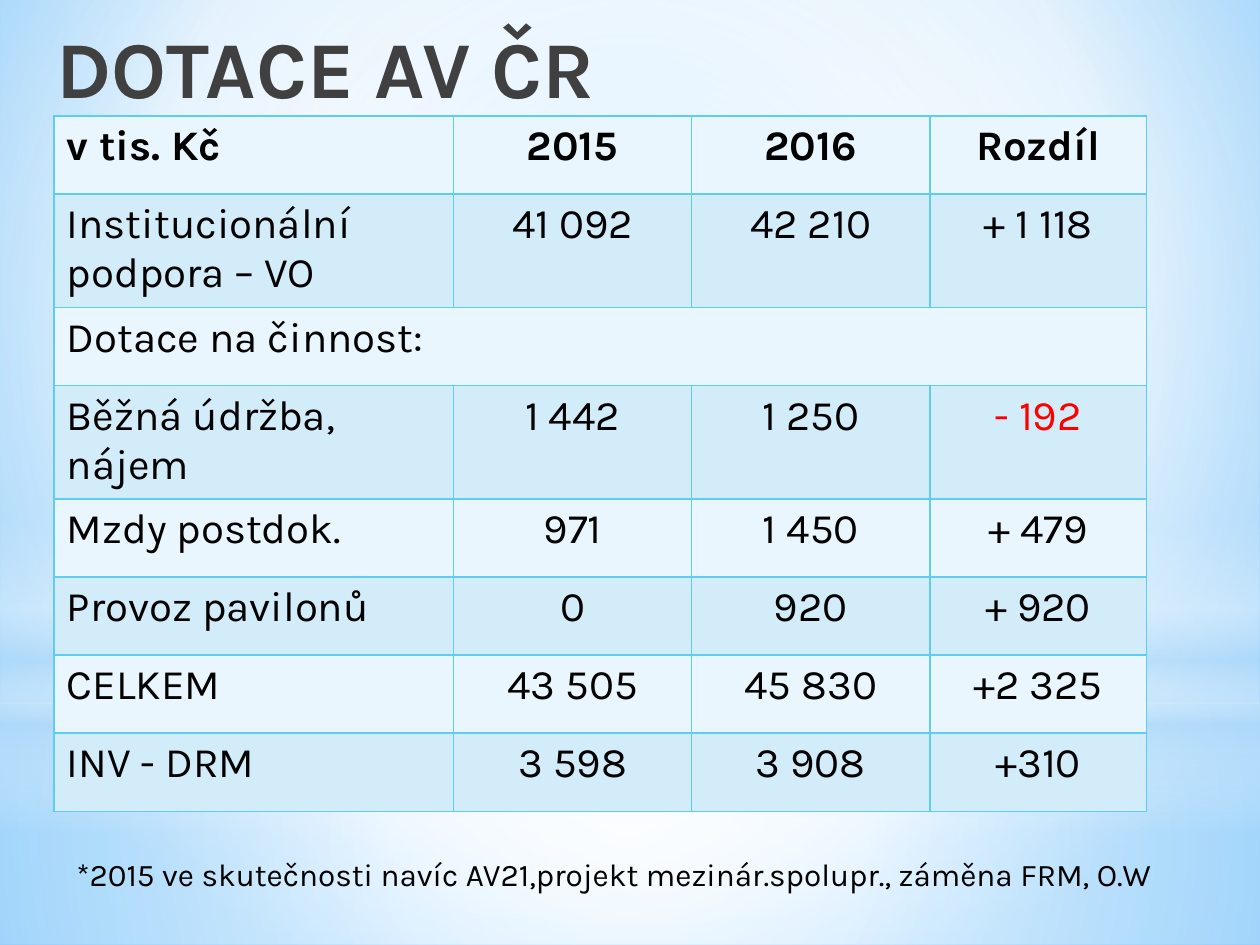
from pptx import Presentation
from pptx.dml.color import RGBColor
from pptx.enum.shapes import MSO_SHAPE as Shape
from pptx.enum.text import MSO_ANCHOR as Anchor, PP_ALIGN as Align
from pptx.oxml import parse_xml
from pptx.oxml.ns import nsdecls, qn
from pptx.util import Inches, Pt

CENTER = (50, 50, 50, 50)
COLUMN_WIDTHS = (3.17, 1.89, 1.89, 1.72)
ROWS = (
    ("v tis. Kč", "2015", "2016", "Rozdíl"),
    ("Institucionální podpora – VO", "41 092", "42 210", "+ 1 118"),
    ("Dotace na činnost:",),
    ("Běžná údržba, nájem", "1 442", "1 250", "- 192"),
    ("Mzdy postdok.", "971", "1 450", "+ 479"),
    ("Provoz pavilonů", "0", "920", "+ 920"),
    ("CELKEM", "43 505", "45 830", "+2 325"),
    ("INV - DRM", "3 598", "3 908", "+310"),
)
TALL_ROWS = (1, 3)


def color(value):
    return RGBColor.from_string(value)


class SlideBuilder:
    """Draws styled elements on the current slide."""

    font = "Karla"
    text_color = "000000"
    border_color = "5ECCF3"
    row_fills = ("EAF6FD", "D2ECFA")

    def __init__(self, slide):
        self.slide = slide

    def gradient(self, element, stops, focus=None, angle=90):
        stop_xml = "".join(
            f'<a:gs pos="{position * 1000}"><a:srgbClr val="{value}">'
            f'<a:alpha val="{opacity * 1000}"/></a:srgbClr></a:gs>'
            for position, value, opacity in stops
        )
        if focus:
            left, top, right, bottom = (side * 1000 for side in focus)
            direction = (
                f'<a:path path="circle"><a:fillToRect l="{left}" t="{top}" '
                f'r="{right}" b="{bottom}"/></a:path>'
            )
        else:
            direction = f'<a:lin ang="{angle * 60000}" scaled="0"/>'
        solid = element.find(".//" + qn("a:solidFill"))
        solid.getparent().replace(solid, parse_xml(
            f'<a:gradFill {nsdecls("a")} rotWithShape="1">'
            f"<a:gsLst>{stop_xml}</a:gsLst>{direction}</a:gradFill>"
        ))

    def background(self, stops, focus):
        self.slide.background.fill.solid()
        self.gradient(self.slide._element, stops, focus)

    def glow(self, kind, top, height, stops, focus=None):
        shape = self.slide.shapes.add_shape(
            kind, Inches(0), Inches(top), Inches(10), Inches(height))
        shape.shadow.inherit = False
        shape.line.fill.background()
        shape.fill.solid()
        self.gradient(shape._element, stops, focus)

    def add_text(self, frame, text, size, value=None, bold=False, align=Align.LEFT):
        paragraph = frame.paragraphs[0]
        paragraph.alignment = align
        run = paragraph.add_run()
        run.text = text
        run.font.name = self.font
        run.font.size = Pt(size)
        run.font.bold = bold
        run.font.color.rgb = color(value or self.text_color)

    def text_box(self, left, top, width, height, text, size, inset=0.05, **style):
        shape = self.slide.shapes.add_textbox(
            Inches(left), Inches(top), Inches(width), Inches(height))
        frame = shape.text_frame
        frame.word_wrap = True
        frame.vertical_anchor = Anchor.TOP
        frame.margin_top = Inches(inset)
        self.add_text(frame, text, size, **style)

    def borders(self, cell):
        properties = cell._tc.get_or_add_tcPr()
        for side in ("lnL", "lnR", "lnT", "lnB"):
            properties.append(parse_xml(
                f'<a:{side} {nsdecls("a")} w="{Pt(1)}"><a:solidFill>'
                f'<a:srgbClr val="{self.border_color}"/></a:solidFill></a:{side}>'
            ))

    def table(self, left, top, widths, heights, rows):
        table = self.slide.shapes.add_table(
            len(rows), len(widths), Inches(left), Inches(top),
            Inches(sum(widths)), Inches(sum(heights))).table
        for column, width in zip(table.columns, widths):
            column.width = Inches(width)
        for index, (texts, height) in enumerate(zip(rows, heights)):
            table.rows[index].height = Inches(height)
            for cell in table.rows[index].cells:
                self.borders(cell)
                cell.fill.solid()
                cell.fill.fore_color.rgb = color(self.row_fills[index % 2])
            if len(texts) == 1:
                table.cell(index, 0).merge(table.cell(index, len(widths) - 1))
            for position, text in enumerate(texts):
                self.add_text(
                    table.cell(index, position).text_frame, text, 24,
                    value="FF0000" if text.startswith("-") else None,
                    bold=index == 0,
                    align=Align.CENTER if position else Align.LEFT)


def main():
    presentation = Presentation()
    presentation.slide_width = Inches(10)
    presentation.slide_height = Inches(7.5)
    builder = SlideBuilder(presentation.slides.add_slide(presentation.slide_layouts[6]))

    builder.background(
        ((0, "9ED5FF", 100), (60, "FFFFFF", 100), (100, "5BB9FF", 100)), (20, 10, 20, 60))
    builder.glow(Shape.RECTANGLE, 5.58, 1.92,
                 ((0, "FFFFFF", 91), (37, "FFFFFF", 76), (100, "B4DCFA", 79)), CENTER)
    builder.glow(Shape.RECTANGLE, 0, 5.58,
                 ((0, "FFFFFF", 89), (48, "FFFFFF", 62), (100, "B4DCFA", 79)), CENTER)
    builder.glow(Shape.RECTANGLE, 4.12, 2.5,
                 ((0, "FFFFFF", 0), (29, "FFFFFF", 30), (45, "B4DCFA", 40),
                  (55, "FFFFFF", 26), (65, "B4DCFA", 60), (100, "FFFFFF", 0)))
    builder.glow(Shape.OVAL, 1.75, 5.58,
                 ((0, "FFFFFF", 100), (56, "FFFFFF", 0), (100, "FFFFFF", 0)), CENTER)

    builder.text_box(0.35, 0.04, 9.65, 1.25, "DOTACE AV ČR", 46, inset=0.1,
                     value="404040", bold=True)
    heights = [0.87 if index in TALL_ROWS else 0.62 for index in range(len(ROWS))]
    builder.table(0.43, 0.92, COLUMN_WIDTHS, heights, ROWS)
    builder.text_box(0.51, 6.74, 8.98, 0.4,
                     "*2015 ve skutečnosti navíc AV21,projekt mezinár.spolupr., záměna FRM, O.W", 18)
    presentation.save("out.pptx")


if __name__ == "__main__":
    main()
